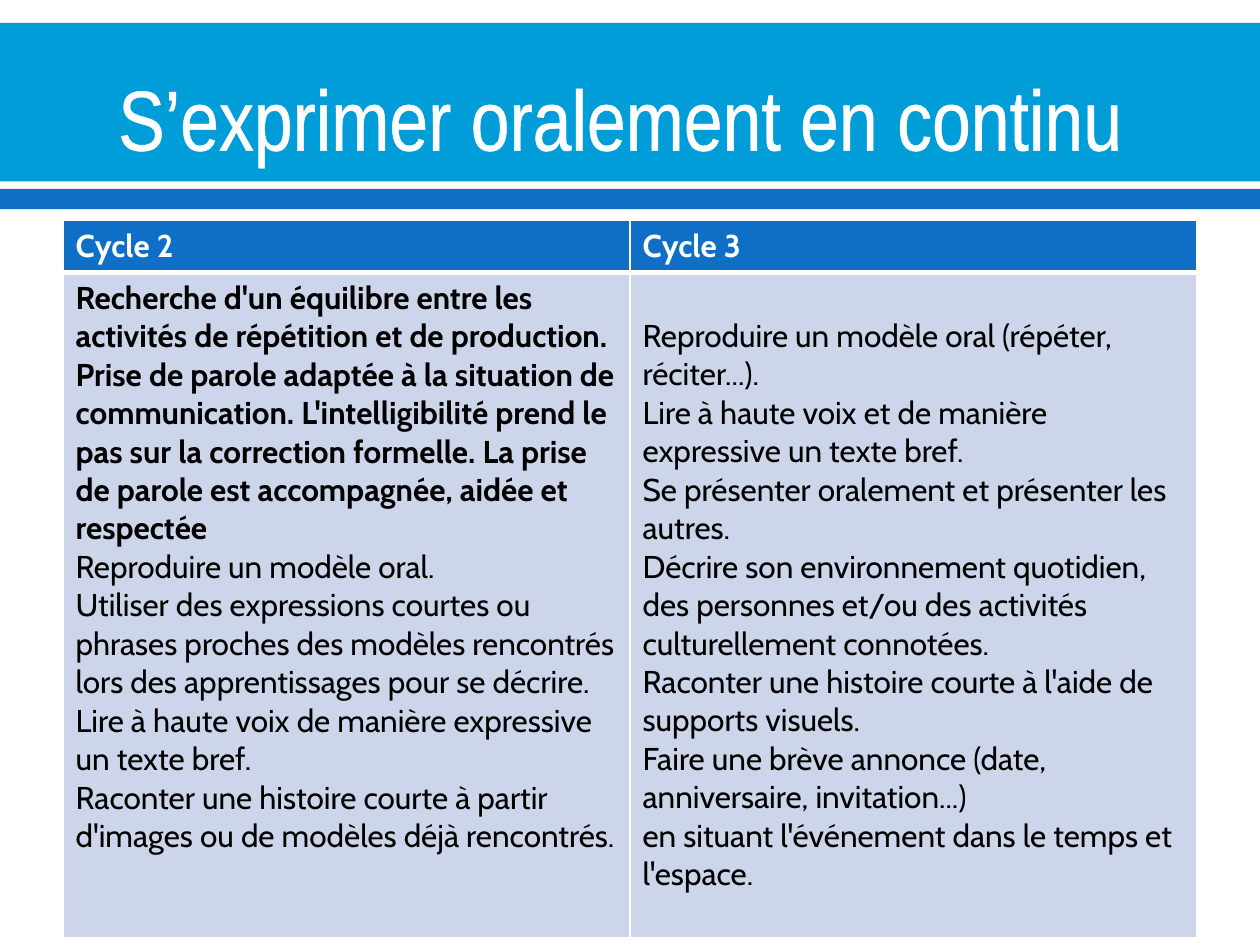
from lxml import etree
from pptx import Presentation
from pptx import util as u
from pptx.dml.color import RGBColor
from pptx.enum import shapes, text
from pptx.oxml import ns

COLORS = {
    "sky": "009DD9",
    "blue": "0F6FC6",
    "pale": "CCD5EA",
    "white": "FFFFFF",
    "black": "000000",
}
FONT = "Cabin"
LINE = u.Cm(0.77)
INSET = u.Cm(0.13)

HEADS = ["Cycle 2", "Cycle 3"]
GOALS = [
    [
        "Recherche d'un équilibre entre les activités de répétition et de production. "
        "Prise de parole adaptée à la situation de communication. L'intelligibilité "
        "prend le pas sur la correction formelle. La prise de parole est accompagnée, "
        "aidée et respectée",
        "Reproduire un modèle oral.",
        "Utiliser des expressions courtes ou phrases proches des modèles rencontrés "
        "lors des apprentissages pour se décrire.",
        "Lire à haute voix de manière expressive un texte bref.",
        "Raconter une histoire courte à partir d'images ou de modèles déjà rencontrés.",
    ],
    [
        "Reproduire un modèle oral (répéter, réciter...).",
        "Lire à haute voix et de manière expressive un texte bref.",
        "Se présenter oralement et présenter les autres.",
        "Décrire son environnement quotidien, des personnes et/ou des activités "
        "culturellement connotées.",
        "Raconter une histoire courte à l'aide de supports visuels.",
        "Faire une brève annonce (date, anniversaire, invitation...)",
        "en situant l'événement dans le temps et l'espace.",
    ],
]


def tint(name):
    return RGBColor.from_string(COLORS[name])


def make_line(tag, color, width):
    """Return a solid line element, for a text outline or a cell border."""
    line = etree.Element(ns.qn(tag), w=str(u.Pt(width)))
    fill = etree.SubElement(line, ns.qn("a:solidFill"))
    etree.SubElement(fill, ns.qn("a:srgbClr"), val=COLORS[color])
    return line


def style(run, font, size, color, bold=False):
    run.font.name = font
    run.font.size = u.Pt(size)
    run.font.bold = bold
    run.font.color.rgb = tint(color)


def add_band(slide, top, height, color):
    band = slide.shapes.add_shape(
        shapes.MSO_SHAPE.RECTANGLE, 0, u.Cm(top), u.Cm(25.4), u.Cm(height))
    band.shadow.inherit = False
    band.fill.solid()
    band.fill.fore_color.rgb = tint(color)
    band.line.fill.background()


def set_title(slide, words):
    title = slide.shapes.title
    title.left, title.top = u.Cm(1.27), u.Cm(1.12)
    title.width, title.height = u.Cm(22.86), u.Cm(2.46)
    frame = title.text_frame
    frame.text = words
    frame.word_wrap = True
    frame.auto_size = text.MSO_AUTO_SIZE.NONE
    frame.vertical_anchor = text.MSO_ANCHOR.MIDDLE
    para = frame.paragraphs[0]
    para.alignment = text.PP_ALIGN.CENTER
    run = para.runs[0]
    style(run, "Arial Narrow", 48.6, "white")
    run.font._element.insert(0, make_line("a:ln", "white", 1.1))
    # The title has to lie in front of the bands.
    title.element.getparent().append(title.element)


def fill_cell(cell, words, fill, color, edges):
    """Write the words; edges holds widths for left, right, top and bottom."""
    cell.text_frame.text = words
    cell.margin_top = cell.margin_bottom = INSET
    cell.fill.solid()
    cell.fill.fore_color.rgb = tint(fill)
    for para in cell.text_frame.paragraphs:
        for run in para.runs:
            style(run, FONT, 18, color)
    props = cell._tc.get_or_add_tcPr()
    for spot, (side, width) in enumerate(zip("LRTB", edges)):
        props.insert(spot, make_line(f"a:ln{side}", "white", width))


def add_goals(slide):
    frame = slide.shapes.add_table(
        2, 2, u.Cm(1.27), u.Cm(4.45), u.Cm(22.86), u.Cm(14.45))
    table = frame.table
    table.rows[0].height = u.Cm(1.04)
    table.rows[1].height = u.Cm(13.41)
    for col, (head, goals) in enumerate(zip(HEADS, GOALS)):
        top, body = table.cell(0, col), table.cell(1, col)
        fill_cell(top, head, "blue", "white", (1, 1, 1, 3))
        fill_cell(body, "\n".join(goals), "pale", "black", (1, 1, 3, 1))
        top.text_frame.paragraphs[0].runs[0].font.bold = True
    # The left text opens in bold; the right text starts one line lower.
    table.cell(1, 0).text_frame.paragraphs[0].runs[0].font.bold = True
    table.cell(1, 1).margin_top = INSET + LINE


def main():
    deck = Presentation()
    deck.slide_width, deck.slide_height = u.Cm(25.4), u.Cm(19.05)
    slide = deck.slides.add_slide(deck.slide_layouts[5])
    add_band(slide, 0.46, 3.2, "sky")
    add_band(slide, 3.81, 0.41, "blue")
    set_title(slide, "S’exprimer oralement en continu ")
    add_goals(slide)
    deck.save("out.pptx")


if __name__ == "__main__":
    main()
